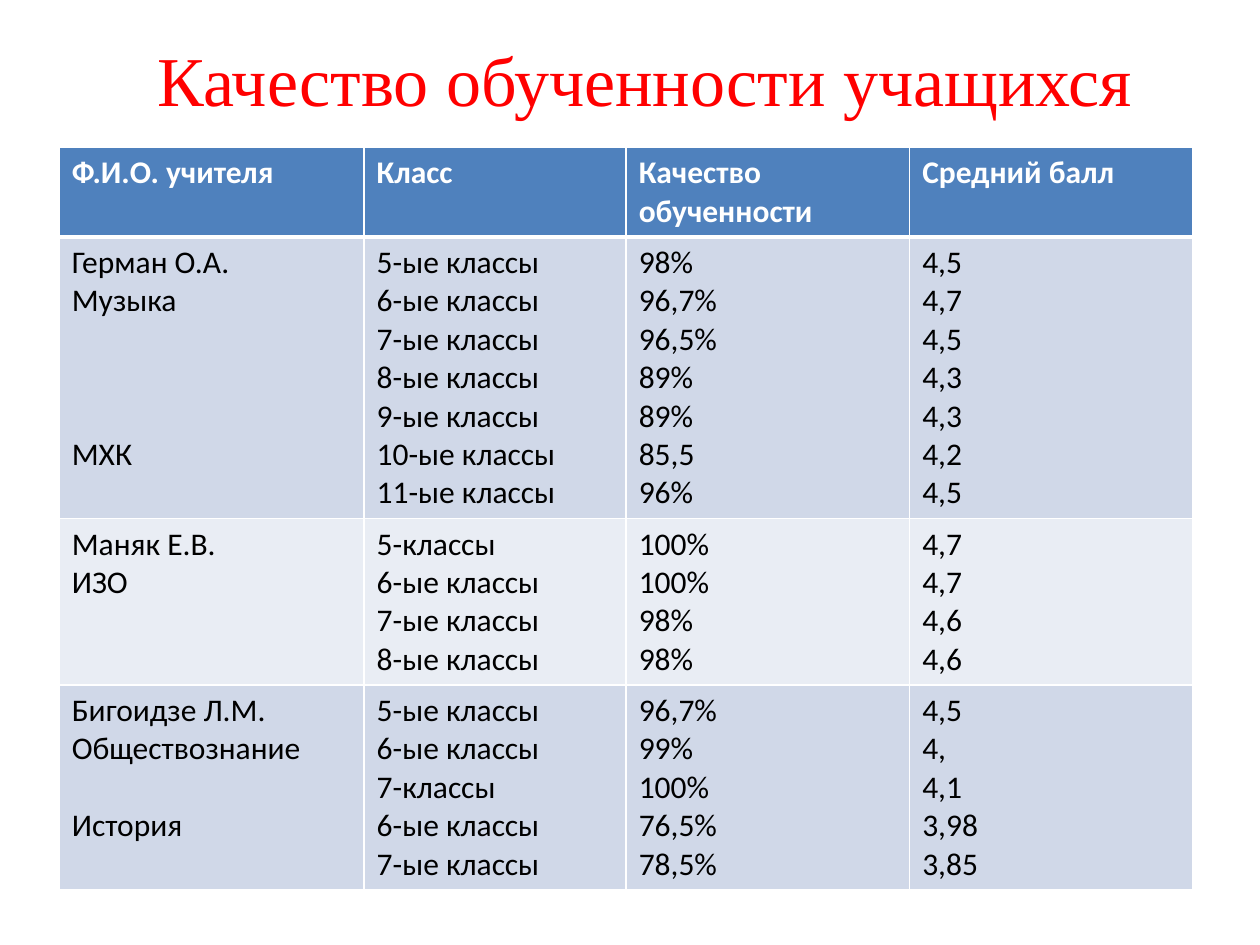
from dataclasses import dataclass

from lxml.etree import SubElement
from pptx import Presentation
from pptx.dml.color import RGBColor
from pptx.enum.text import MSO_ANCHOR, PP_ALIGN
from pptx.oxml.ns import qn
from pptx.util import Inches, Pt

RED = RGBColor(0xFF, 0x00, 0x00)
WHITE = RGBColor(0xFF, 0xFF, 0xFF)
BLACK = RGBColor(0x00, 0x00, 0x00)
HEADER_BLUE = RGBColor(0x4F, 0x81, 0xBD)
DARK_BAND = RGBColor(0xD0, 0xD8, 0xE8)
LIGHT_BAND = RGBColor(0xE9, 0xED, 0xF4)

LINE_HEIGHT = 22  # points taken by one line of 18 pt text
COLUMN_WIDTHS = (2.42, 2.08, 2.25, 2.25)
ROW_HEIGHTS = (0.7, 2.12, 1.25, 1.54)
HEADINGS = ("Ф.И.О. учителя", "Класс", "Качество обученности", "Средний балл")


@dataclass(frozen=True)
class Teacher:
    """Results of one teacher; last_subject starts skipped_lines below the rest."""
    labels: list[str]
    classes: list[str]
    quality: list[str]
    marks: list[str]
    last_subject: str = ""
    skipped_lines: int = 0


TEACHERS = [
    Teacher(
        ["Герман О.А.", "Музыка"],
        [f"{grade}-ые классы" for grade in range(5, 12)],
        ["98%", "96,7%", "96,5%", "89%", "89%", "85,5", "96%"],
        ["4,5", "4,7", "4,5", "4,3", "4,3", "4,2", "4,5"],
        "МХК", 3,
    ),
    Teacher(
        ["Маняк Е.В.", "ИЗО"],
        ["5-классы", "6-ые классы", "7-ые классы", "8-ые классы"],
        ["100%", "100%", "98%", "98%"],
        ["4,7", "4,7", "4,6", "4,6"],
    ),
    Teacher(
        ["Бигоидзе Л.М.", "Обществознание"],
        ["5-ые классы", "6-ые классы", "7-классы", "6-ые классы", "7-ые классы"],
        ["96,7%", "99%", "100%", "76,5%", "78,5%"],
        ["4,5", "4,", "4,1", "3,98", "3,85"],
        "История", 1,
    ),
]


def add_borders(cell, bottom_width: float) -> None:
    properties = cell._tc.get_or_add_tcPr()
    widths = {"a:lnL": 1, "a:lnR": 1, "a:lnT": 1, "a:lnB": bottom_width}
    for tag, width in widths.items():
        line = SubElement(properties, qn(tag), w=str(Pt(width)))
        fill = SubElement(line, qn("a:solidFill"))
        SubElement(fill, qn("a:srgbClr"), val=str(WHITE))


def fill_cell(cell, lines: list[str], fill: RGBColor, color: RGBColor,
              bold: bool = False, bottom_width: float = 1) -> None:
    add_borders(cell, bottom_width)
    cell.fill.solid()
    cell.fill.fore_color.rgb = fill
    cell.text_frame.text = "\n".join(lines)
    for para in cell.text_frame.paragraphs:
        for span in para.runs:
            span.font.name = "Calibri"
            span.font.size = Pt(18)
            span.font.bold = bold
            span.font.color.rgb = color


def add_title(page) -> None:
    title = page.shapes.title
    title.left, title.top = Inches(0.62), Inches(0)
    title.width, title.height = Inches(9), Inches(1.25)
    title.text_frame.text = "Качество обученности учащихся"
    title.text_frame.vertical_anchor = MSO_ANCHOR.MIDDLE
    para = title.text_frame.paragraphs[0]
    para.alignment = PP_ALIGN.CENTER
    font = para.runs[0].font
    font.name = "Times New Roman"
    font.size = Pt(40)
    font.color.rgb = RED


def add_results_table(page) -> None:
    table = page.shapes.add_table(
        len(ROW_HEIGHTS), len(COLUMN_WIDTHS), Inches(0.47), Inches(1.17),
        Inches(sum(COLUMN_WIDTHS)), Inches(sum(ROW_HEIGHTS))).table
    for column, width in zip(table.columns, COLUMN_WIDTHS):
        column.width = Inches(width)
    for row, height in zip(table.rows, ROW_HEIGHTS):
        row.height = Inches(height)

    for column, heading in enumerate(HEADINGS):
        fill_cell(table.cell(0, column), [heading], HEADER_BLUE, WHITE,
                  bold=True, bottom_width=3)
    for row, teacher in enumerate(TEACHERS, start=1):
        band = DARK_BAND if row % 2 else LIGHT_BAND
        labels = teacher.labels + ([teacher.last_subject] if teacher.last_subject else [])
        columns = (labels, teacher.classes, teacher.quality, teacher.marks)
        for column, lines in enumerate(columns):
            fill_cell(table.cell(row, column), lines, band, BLACK)
        if teacher.skipped_lines:
            last_para = table.cell(row, 0).text_frame.paragraphs[-1]
            last_para.space_before = Pt(teacher.skipped_lines * LINE_HEIGHT)


def main() -> None:
    deck = Presentation()
    deck.slide_width, deck.slide_height = Inches(10), Inches(7.5)
    page = deck.slides.add_slide(deck.slide_layouts[5])
    add_title(page)
    add_results_table(page)
    deck.save("out.pptx")


if __name__ == "__main__":
    main()
